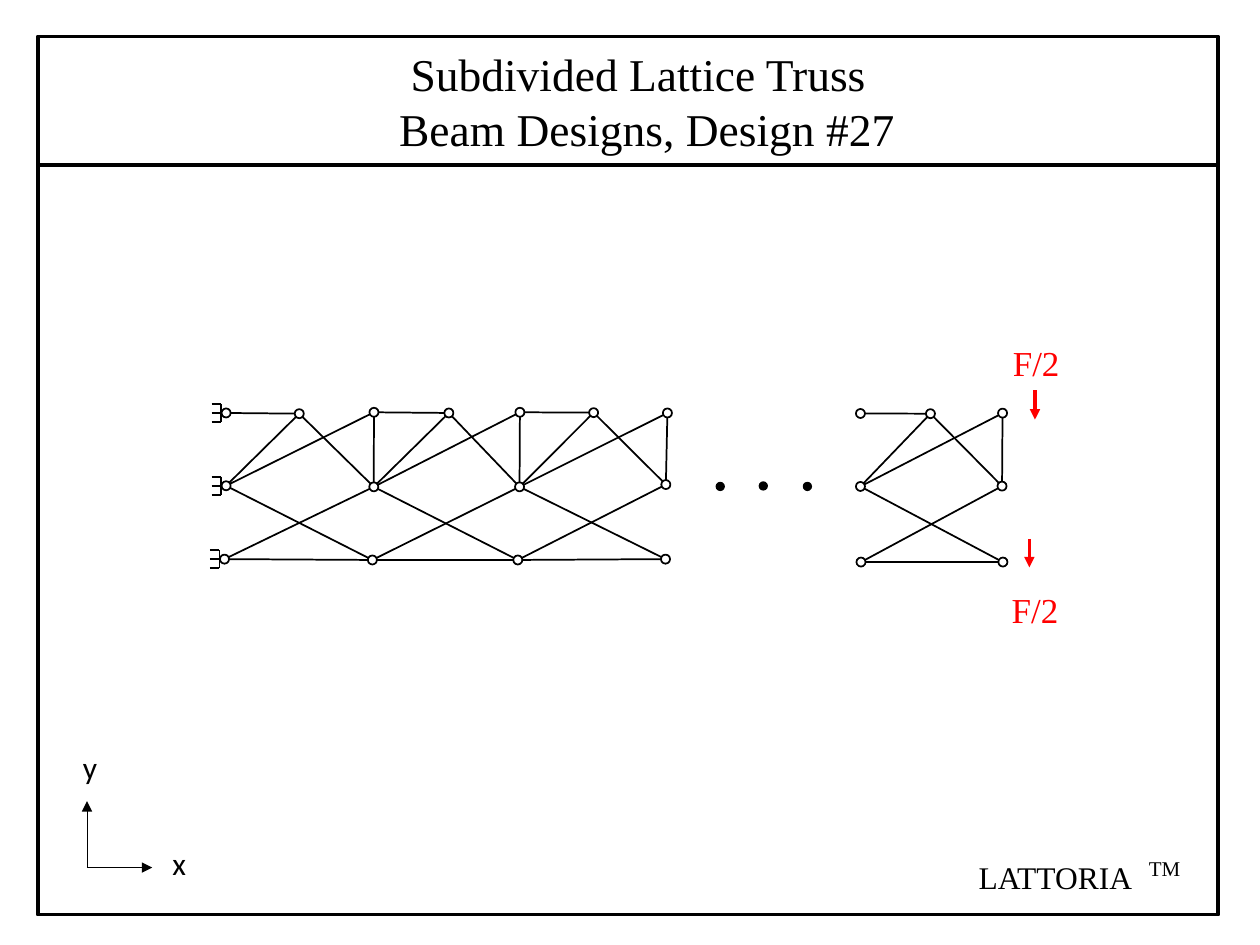
from dataclasses import dataclass
from typing import NamedTuple

from lxml.etree import SubElement
from pptx import Presentation
from pptx.dml.color import RGBColor
from pptx.enum.shapes import MSO_CONNECTOR, MSO_SHAPE
from pptx.enum.text import MSO_AUTO_SIZE
from pptx.oxml.ns import qn
from pptx.shapes.autoshape import Shape
from pptx.slide import Slide
from pptx.util import Pt

COLORS = {"ink": "000000", "paper": "FFFFFF", "force": "FF0000"}
SERIF = "Times New Roman"
SANS = "Calibri"
JOINT_SIZE = 5.2
DOT_SIZE = 4.3
SUPPORT_OFFSET = 2.9
SUPPORT_REACH = 5.2
PRONG_LENGTH = 5.4


class Point(NamedTuple):
    x: float
    y: float


class Column(NamedTuple):
    top: Point
    middle: Point
    bottom: Point


@dataclass
class Bay:
    left: Column
    peak: Point
    right: Column

    def members(self) -> list[tuple[Point, Point]]:
        left, peak, right = self.left, self.peak, self.right
        return [
            (left.top, peak),
            (left.middle, peak),
            (right.middle, peak),
            (left.middle, right.top),
            (right.top, right.middle),
            (left.middle, right.bottom),
            (left.bottom, right.middle),
            (left.bottom, right.bottom),
        ]

    def joints(self) -> list[Point]:
        return [*self.left, self.peak, *self.right]


@dataclass
class Arrow:
    start: Point
    end: Point
    color: str
    width: float


@dataclass
class Label:
    text: str
    left: float
    top: float
    width: float
    height: float
    size: float
    font: str = SERIF
    color: str = "ink"


COLUMNS = [
    Column(Point(129.2, 236), Point(129.2, 277.6), Point(128.3, 319.5)),
    Column(Point(213.7, 235.6), Point(213.6, 278.2), Point(212.8, 320)),
    Column(Point(297.1, 235.6), Point(296.9, 278.2), Point(295.9, 320)),
    Column(Point(381.4, 236), Point(380.5, 276.9), Point(380.3, 319.5)),
]
PEAKS = [Point(171, 236.4), Point(256.5, 236), Point(339.2, 235.8)]
END_BAY = Bay(
    Column(Point(491.7, 236.3), Point(491.7, 278), Point(492, 321.2)),
    Point(531.7, 236.4),
    Column(Point(572.9, 236.1), Point(572.6, 277.8), Point(573.1, 321.2)),
)
BAYS = [Bay(*parts) for parts in zip(COLUMNS, PEAKS, COLUMNS[1:])] + [END_BAY]
ELLIPSIS_DOTS = [Point(411.6, 278), Point(436.2, 277.7), Point(461.4, 278)]

AXIS_ORIGIN = Point(49.7, 495.8)
ARROWS = [
    Arrow(AXIS_ORIGIN, Point(87, 495.8), "ink", 0.5),
    Arrow(AXIS_ORIGIN, Point(49.7, 457.8), "ink", 0.5),
    Arrow(Point(591.4, 223), Point(591.4, 239.8), "force", 2),
    Arrow(Point(588.2, 308), Point(588.2, 324.2), "force", 2),
]
LABELS = [
    Label("x", 91.4, 478.8, 22.3, 28.8, 18, SANS),
    Label("y", 40.3, 424.1, 22.3, 28.8, 18, SANS),
    Label("F/2", 571.7, 191.5, 50.4, 31.7, 20, color="force"),
    Label("F/2", 571, 332.6, 45.4, 31.7, 20, color="force"),
    Label(" Subdivided Lattice Truss\nBeam Designs, Design #27", 221, 23, 308.2, 70.6, 26),
    Label("LATTORIA", 552.2, 486.7, 109.4, 28.8, 18),
    Label("TM", 649.4, 485.5, 36.7, 21.6, 12),
]


def rgb(name: str) -> RGBColor:
    return RGBColor.from_string(COLORS[name])


def add_line(slide: Slide, start: Point, end: Point, width: float = 1,
             color: str = "ink", arrow: bool = False) -> None:
    connector = slide.shapes.add_connector(
        MSO_CONNECTOR.STRAIGHT, Pt(start.x), Pt(start.y), Pt(end.x), Pt(end.y))
    connector.line.width = Pt(width)
    connector.line.color.rgb = rgb(color)
    properties = connector.line._get_or_add_ln().getparent()
    if arrow:
        SubElement(connector.line._get_or_add_ln(), qn("a:tailEnd"), type="triangle")
    SubElement(properties, qn("a:effectLst"))


def style_outline(shape: Shape, width: float) -> None:
    shape.shadow.inherit = False
    shape.line.width = Pt(width)
    shape.line.color.rgb = rgb("ink")


def add_circle(slide: Slide, center: Point, size: float, fill: str) -> None:
    circle = slide.shapes.add_shape(
        MSO_SHAPE.OVAL, Pt(center.x - size / 2), Pt(center.y - size / 2), Pt(size), Pt(size))
    style_outline(circle, 1)
    circle.fill.solid()
    circle.fill.fore_color.rgb = rgb(fill)


def add_support(slide: Slide, joint: Point) -> None:
    wall = joint.x - SUPPORT_OFFSET
    levels = [joint.y + step * SUPPORT_REACH for step in (-1, 0, 1)]
    add_line(slide, Point(wall, levels[0]), Point(wall, levels[-1]))
    for level in levels:
        add_line(slide, Point(wall - PRONG_LENGTH, level), Point(wall, level))


def add_label(slide: Slide, label: Label) -> None:
    box = slide.shapes.add_textbox(
        Pt(label.left), Pt(label.top), Pt(label.width), Pt(label.height))
    frame = box.text_frame
    frame.word_wrap = True
    frame.auto_size = MSO_AUTO_SIZE.SHAPE_TO_FIT_TEXT
    frame.text = label.text
    for paragraph in frame.paragraphs:
        paragraph.font.name = label.font
        paragraph.font.size = Pt(label.size)
        paragraph.font.color.rgb = rgb(label.color)


def add_frame(slide: Slide) -> None:
    border = slide.shapes.add_shape(
        MSO_SHAPE.RECTANGLE, Pt(21.6), Pt(20.9), Pt(674.6), Pt(501.8))
    style_outline(border, 2)
    border.fill.background()
    add_line(slide, Point(21.6, 94.3), Point(696.2, 94.3), 2)


def add_truss(slide: Slide) -> None:
    for bay in BAYS:
        for start, end in bay.members():
            add_line(slide, start, end)
    for joint in COLUMNS[0]:
        add_support(slide, joint)
    for joint in dict.fromkeys(joint for bay in BAYS for joint in bay.joints()):
        add_circle(slide, joint, JOINT_SIZE, "paper")
    for dot in ELLIPSIS_DOTS:
        add_circle(slide, dot, DOT_SIZE, "ink")


def main() -> None:
    """Build the lattice truss slide and save it."""
    presentation = Presentation()
    presentation.slide_width, presentation.slide_height = Pt(720), Pt(540)
    slide = presentation.slides.add_slide(presentation.slide_layouts[6])
    add_frame(slide)
    add_truss(slide)
    for arrow in ARROWS:
        add_line(slide, arrow.start, arrow.end, arrow.width, arrow.color, arrow=True)
    for label in LABELS:
        add_label(slide, label)
    presentation.save("out.pptx")


if __name__ == "__main__":
    main()
